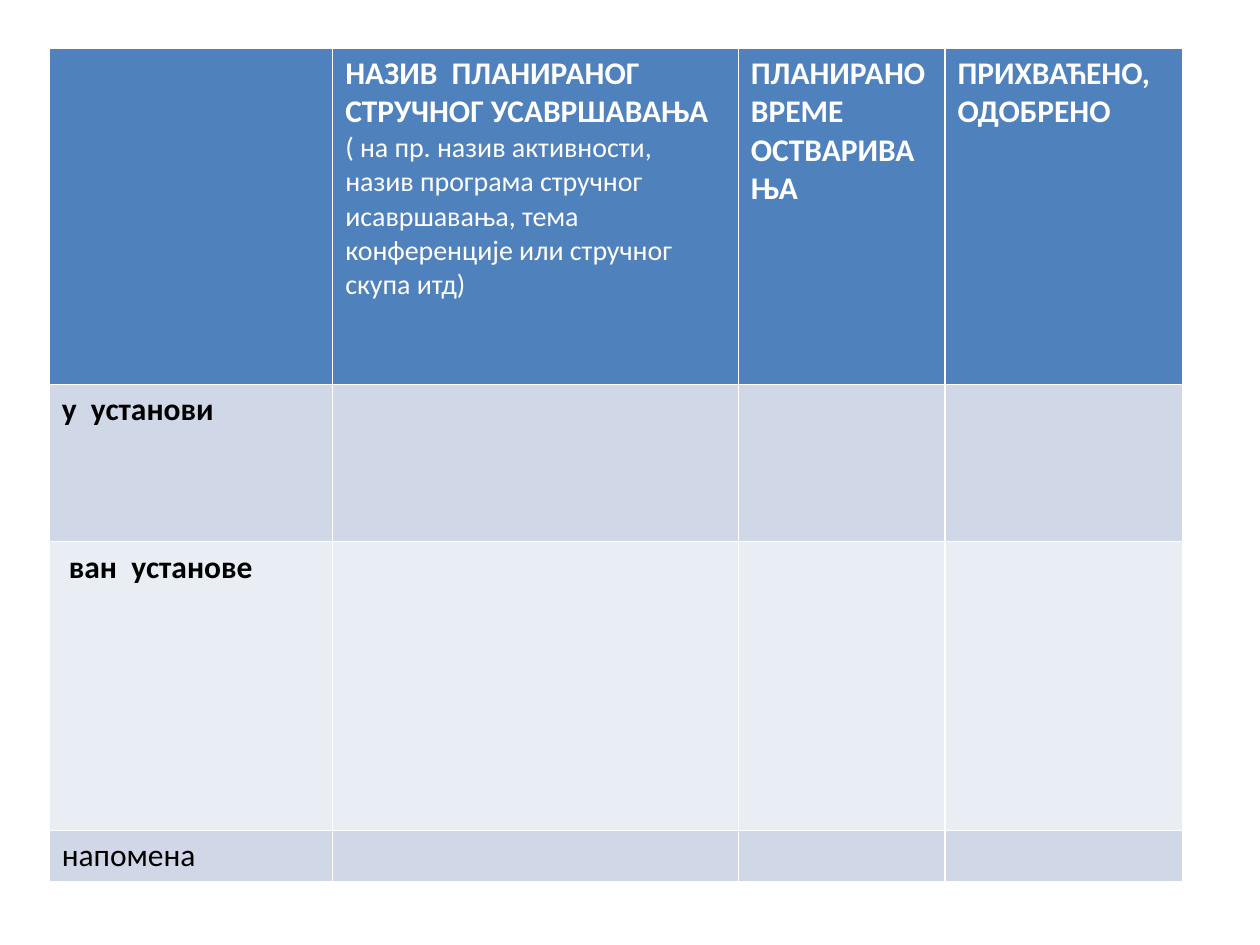
"""Build a slide with a planning table for professional training."""
from dataclasses import dataclass

from lxml.etree import SubElement
from pptx import Presentation
from pptx.dml.color import RGBColor
from pptx.oxml.ns import qn
from pptx.table import Table, _Cell
from pptx.util import Inches, Pt

WHITE, BLACK = "FFFFFF", "000000"
WIDTHS = [2.25, 3.22, 1.64, 1.89]


@dataclass
class Part:
    text: str
    size: int = 18
    bold: bool = True


@dataclass
class Row:
    height: float
    fill: str
    ink: str
    cells: list[list[list[Part]]]


ROWS = [
    Row(2.67, "4F81BD", WHITE, [
        [],
        [[Part("НАЗИВ  ПЛАНИРАНОГ СТРУЧНОГ УСАВРШАВАЊА  "),
          Part("( на пр. назив активности, назив програма стручног "
               "исавршавања, тема конференције или стручног скупа итд)",
               16, False)]],
        [[Part("ПЛАНИРАНО ВРЕМЕ")], [Part("ОСТВАРИВАЊА")]],
        [[Part("ПРИХВАЋЕНО,")], [Part("ОДОБРЕНО")]],
    ]),
    Row(1.25, "D0D8E8", BLACK, [[[Part("у  установи")]], [], [], []]),
    Row(2.29, "E9EDF4", BLACK, [[[Part(" ван  установе")]], [], [], []]),
    Row(0.4, "D0D8E8", BLACK, [[[Part("напомена", bold=False)]], [], [], []]),
]


def color(code: str) -> RGBColor:
    return RGBColor.from_string(code)


def edge(cell: _Cell) -> None:
    props = cell._tc.get_or_add_tcPr()
    for side in ("lnL", "lnR", "lnT", "lnB"):
        line = SubElement(props, qn(f"a:{side}"), w=str(Pt(1)))
        fill = SubElement(line, qn("a:solidFill"))
        SubElement(fill, qn("a:srgbClr"), val=WHITE)


def write(cell: _Cell, lines: list[list[Part]], ink: str) -> None:
    frame = cell.text_frame
    for num, parts in enumerate(lines):
        para = frame.add_paragraph() if num else frame.paragraphs[0]
        para.font.name = "Calibri"
        para.font.color.rgb = color(ink)
        for part in parts:
            run = para.add_run()
            run.text = part.text
            run.font.size = Pt(part.size)
            run.font.bold = part.bold


def draw(table: Table, rows: list[Row]) -> None:
    for col, width in zip(table.columns, WIDTHS):
        col.width = Inches(width)
    for num, row in enumerate(rows):
        table.rows[num].height = Inches(row.height)
        for cell, lines in zip(table.rows[num].cells, row.cells):
            edge(cell)
            cell.fill.solid()
            cell.fill.fore_color.rgb = color(row.fill)
            write(cell, lines, row.ink)


def main() -> None:
    deck = Presentation()
    deck.slide_width, deck.slide_height = Inches(10), Inches(7.5)
    slide = deck.slides.add_slide(deck.slide_layouts[6])
    height = sum(row.height for row in ROWS)
    frame = slide.shapes.add_table(
        len(ROWS), len(WIDTHS), Inches(0.39), Inches(0.38),
        Inches(sum(WIDTHS)), Inches(height))
    draw(frame.table, ROWS)
    deck.save("out.pptx")


if __name__ == "__main__":
    main()
